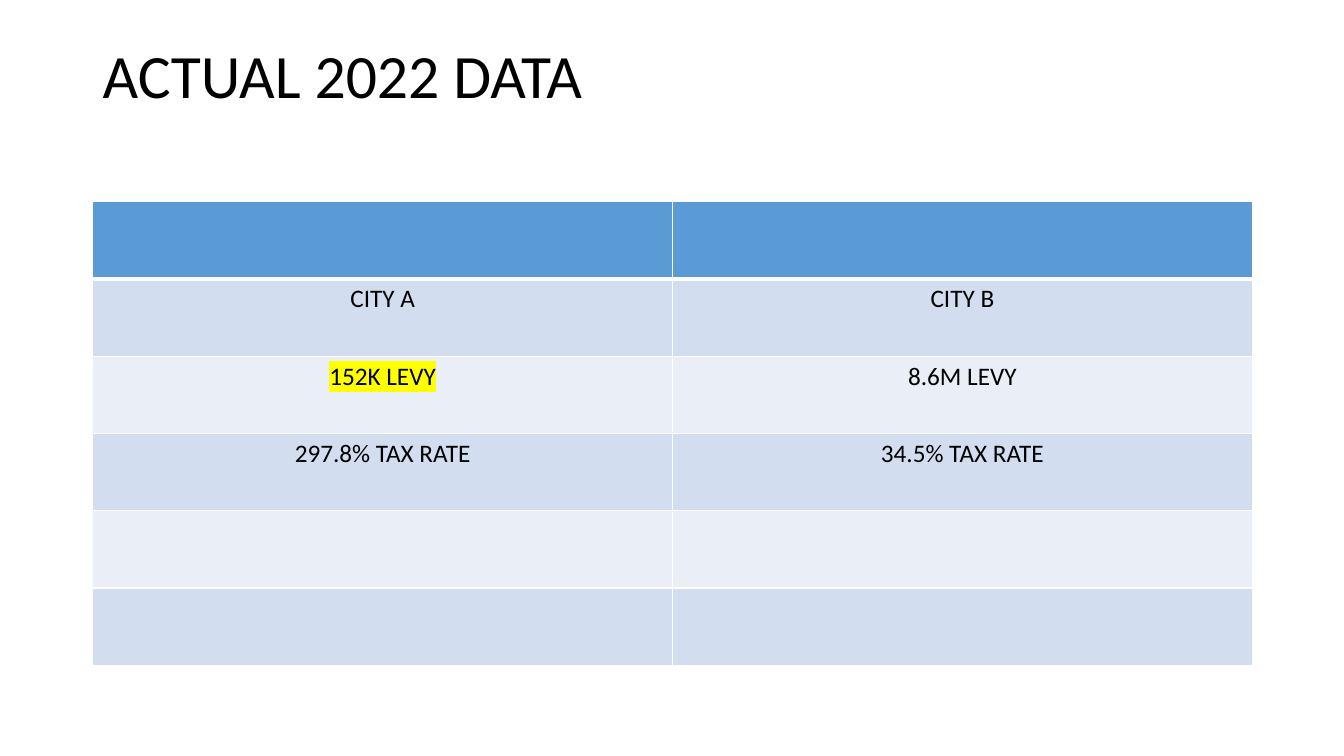
"""Build a slide with a title and a table comparing the 2022 levies of two cities."""
from lxml.etree import SubElement
from pptx import Presentation
from pptx.dml.color import RGBColor
from pptx.enum.text import MSO_ANCHOR, PP_ALIGN
from pptx.oxml.ns import qn
from pptx.util import Inches, Pt

TITLE = "ACTUAL 2022 DATA"
ROWS = [
    ("", ""),
    ("CITY A", "CITY B"),
    ("152K LEVY", "8.6M LEVY"),
    ("297.8% TAX RATE", "34.5% TAX RATE"),
    ("", ""),
    ("", ""),
]
HIGHLIGHTED = {"152K LEVY": "FFFF00"}
HEADER_FILL = "5B9BD5"
BAND_FILLS = ("EAEFF7", "D2DEEF")
BORDER_COLOR = "FFFFFF"
TEXT_COLOR = "000000"
FONT = "Calibri"
LEFT, WIDTH = 0.92, 11.5
TITLE_TOP, TITLE_HEIGHT = 0.4, 1.45
TABLE_TOP, TABLE_HEIGHT = 2, 4.6


def color(value):
    return RGBColor.from_string(value)


def add_run(paragraph, text, size):
    run = paragraph.add_run()
    run.text = text
    run.font.size = Pt(size)
    run.font.name = FONT
    run.font.color.rgb = color(TEXT_COLOR)
    return run


def add_solid_color(parent, tag, value):
    SubElement(SubElement(parent, qn(tag)), qn("a:srgbClr"), val=value)


def highlight(run, value):
    properties = run.font._element
    add_solid_color(properties, "a:highlight", value)
    properties.find(qn("a:solidFill")).addnext(properties[-1])


def add_borders(cell, top, bottom):
    properties = cell._tc.get_or_add_tcPr()
    for tag, width in (("a:lnL", 1), ("a:lnR", 1), ("a:lnT", top), ("a:lnB", bottom)):
        line = SubElement(properties, qn(tag), w=str(Pt(width)))
        add_solid_color(line, "a:solidFill", BORDER_COLOR)


def add_title(slide):
    box = slide.shapes.add_textbox(
        Inches(LEFT), Inches(TITLE_TOP), Inches(WIDTH), Inches(TITLE_HEIGHT))
    frame = box.text_frame
    frame.word_wrap = True
    frame.vertical_anchor = MSO_ANCHOR.TOP
    paragraph = frame.paragraphs[0]
    paragraph.line_spacing = 0.9
    add_run(paragraph, TITLE, 44)


def add_city_table(slide):
    table = slide.shapes.add_table(
        len(ROWS), len(ROWS[0]), Inches(LEFT), Inches(TABLE_TOP),
        Inches(WIDTH), Inches(TABLE_HEIGHT)).table
    for row, texts in enumerate(ROWS):
        for column, text in enumerate(texts):
            cell = table.cell(row, column)
            add_borders(cell, 3 if row == 1 else 1, 3 if row == 0 else 1)
            cell.fill.solid()
            cell.fill.fore_color.rgb = color(BAND_FILLS[row % 2] if row else HEADER_FILL)
            if text:
                paragraph = cell.text_frame.paragraphs[0]
                paragraph.alignment = PP_ALIGN.CENTER
                run = add_run(paragraph, text, 18)
                if text in HIGHLIGHTED:
                    highlight(run, HIGHLIGHTED[text])


def main():
    presentation = Presentation()
    presentation.slide_width = Inches(13.33)
    presentation.slide_height = Inches(7.5)
    slide = presentation.slides.add_slide(presentation.slide_layouts[6])
    add_title(slide)
    add_city_table(slide)
    presentation.save("out.pptx")


if __name__ == "__main__":
    main()
